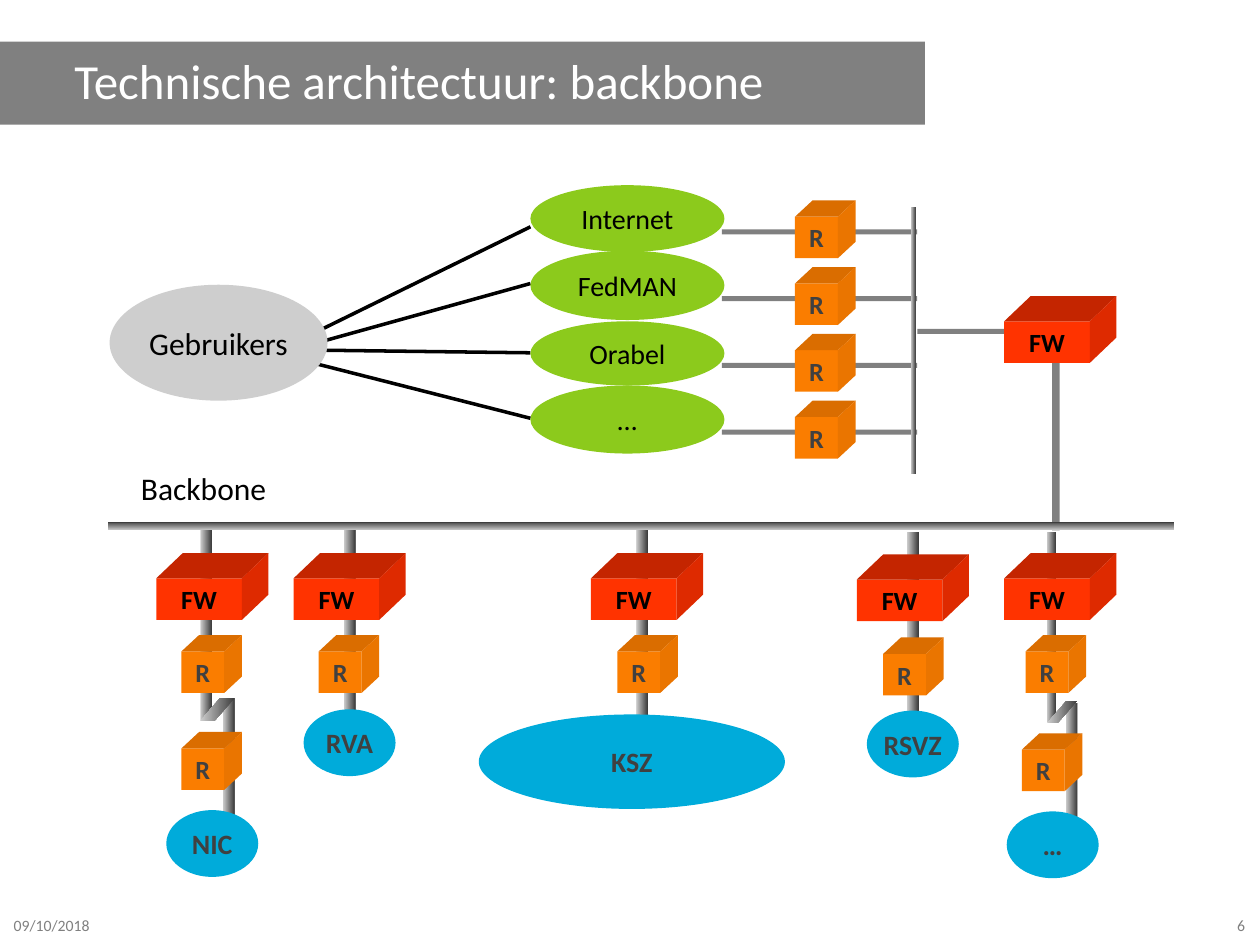
from lxml import etree
from pptx import Presentation
from pptx.dml.color import RGBColor
from pptx.enum.shapes import MSO_CONNECTOR, MSO_SHAPE
from pptx.enum.text import MSO_ANCHOR, PP_ALIGN
from pptx.oxml.ns import qn
from pptx.util import Inches, Pt

BLACK = RGBColor(0x00, 0x00, 0x00)
WHITE = RGBColor(0xFF, 0xFF, 0xFF)
GRAY = RGBColor(0x80, 0x80, 0x80)
DARK_GRAY = RGBColor(0x40, 0x40, 0x40)
PIPE_LIGHT = RGBColor(0xCE, 0xCE, 0xCE)
PIPE_DARK = RGBColor(0x3D, 0x3D, 0x3D)
GREEN = RGBColor(0x8C, 0xCA, 0x1C)
BLUE = RGBColor(0x00, 0xAB, 0xDA)
RED = RGBColor(0xFF, 0x33, 0x00)
RED_TOP = RGBColor(0xC4, 0x25, 0x00)
RED_SIDE = RGBColor(0xDE, 0x2A, 0x00)
ORANGE = RGBColor(0xFA, 0x7D, 0x00)
ORANGE_TOP = RGBColor(0xDA, 0x6D, 0x00)
ORANGE_SIDE = RGBColor(0xEA, 0x75, 0x00)

FIREWALL = ("FW", 0.68, 0.21, 0.2, BLACK, RED, RED_TOP, RED_SIDE)
ROUTER = ("R", 0.34, 0.14, 0.13, DARK_GRAY, ORANGE, ORANGE_TOP, ORANGE_SIDE)
CUBE_HEIGHT = 0.33

presentation = Presentation()
presentation.slide_width = Inches(10)
presentation.slide_height = Inches(7.5)
slide = presentation.slides.add_slide(presentation.slide_layouts[5])
shapes = slide.shapes


def add_block(kind, left, top, width, height, fill, text="", size=16, color=BLACK, bold=False):
    shape = shapes.add_shape(kind, Inches(left), Inches(top), Inches(width), Inches(height))
    shape.shadow.inherit = False
    shape.fill.solid()
    shape.fill.fore_color.rgb = fill
    shape.line.fill.background()
    if text:
        frame = shape.text_frame
        frame.word_wrap = False
        frame.vertical_anchor = MSO_ANCHOR.MIDDLE
        frame.paragraphs[0].alignment = PP_ALIGN.CENTER
        run = frame.paragraphs[0].add_run()
        run.text = text
        run.font.name = "Calibri"
        run.font.size = Pt(size)
        run.font.bold = bold
        run.font.color.rgb = color
    return shape


def add_cube(cube, left, top):
    text, width, depth, rise, color, front, top_fill, side_fill = cube
    right, bottom = left + width, top + CUBE_HEIGHT
    add_block(MSO_SHAPE.RECTANGLE, left, top, width, CUBE_HEIGHT, front, text, 15, color, True)
    top_face = [(left, top), (left + depth, top - rise), (right + depth, top - rise), (right, top)]
    side_face = [(right, top), (right + depth, top - rise), (right + depth, bottom - rise), (right, bottom)]
    for corners, fill in ((top_face, top_fill), (side_face, side_fill)):
        points = [(Inches(x), Inches(y)) for x, y in corners]
        builder = shapes.build_freeform(*points[0])
        builder.add_line_segments(points[1:], close=True)
        face = builder.convert_to_shape()
        face.shadow.inherit = False
        face.fill.solid()
        face.fill.fore_color.rgb = fill
        face.line.fill.background()


title = shapes.title
title.left, title.top = Inches(-0.83), Inches(0.33)
title.width, title.height = Inches(8.17), Inches(0.66)
title.fill.solid()
title.fill.fore_color.rgb = GRAY
title_frame = title.text_frame
title_frame.margin_left = Inches(1.42)
title_frame.margin_top = title_frame.margin_bottom = Inches(0.15)
title_frame.vertical_anchor = MSO_ANCHOR.MIDDLE
title_paragraph = title_frame.paragraphs[0]
title_paragraph.alignment = PP_ALIGN.LEFT
title_paragraph.line_spacing = 0.9
title_run = title_paragraph.add_run()
title_run.text = "Technische architectuur: backbone"
title_run.font.name = "Calibri"
title_run.font.size = Pt(28)
title_run.font.color.rgb = WHITE

for start_x, start_y, end_y in ((2.52, 2.63, 1.8), (2.52, 2.72, 2.25), (2.59, 2.78, 2.8), (2.52, 2.89, 3.32)):
    line = shapes.add_connector(
        MSO_CONNECTOR.STRAIGHT, Inches(start_x), Inches(start_y), Inches(4.21), Inches(end_y)
    )
    line.line.color.rgb = BLACK
    line.line.width = Pt(2)
    etree.SubElement(line._element.spPr, qn("a:effectLst"))
add_block(MSO_SHAPE.OVAL, 0.87, 2.26, 1.73, 0.92, PIPE_LIGHT, "Gebruikers", 18)

add_block(MSO_SHAPE.RECTANGLE, 7.28, 2.61, 1.55, 0.04, GRAY)
add_block(MSO_SHAPE.RECTANGLE, 8.35, 2.88, 0.06, 1.33, GRAY)
networks = (("Internet", 1.47, 0.53), ("FedMAN", 1.99, 0.55), ("Orabel", 2.55, 0.51), ("…", 3.06, 0.54))
for row, (name, top, height) in enumerate(networks):
    link_top = 1.82 + 0.53 * row
    add_block(MSO_SHAPE.RECTANGLE, 5.73, link_top, 1.55, 0.04, GRAY)
    add_cube(ROUTER, 6.31, link_top - 0.1)
    add_block(MSO_SHAPE.OVAL, 4.21, top, 1.54, height, GREEN, name)

pipes = (
    (7.23, 1.64, 0.04, 2.12),
    (1.59, 4.21, 0.09, 1.51),
    (1.77, 5.54, 0.09, 1.24),
    (2.73, 4.21, 0.09, 1.51),
    (5.05, 4.21, 0.09, 1.86),
    (7.2, 4.22, 0.09, 1.51),
    (8.31, 4.22, 0.07, 1.51),
    (8.46, 5.58, 0.09, 1.24),
)
gradient_shapes = [(add_block(MSO_SHAPE.RECTANGLE, *pipe, PIPE_LIGHT), 0) for pipe in pipes]
for left, top, width in ((1.59, 5.54, 0.27), (8.31, 5.56, 0.24)):
    bend = add_block(MSO_SHAPE.PARALLELOGRAM, left, top, width, 0.18, PIPE_LIGHT)
    bend.adjustments[0] = 0.875
    gradient_shapes.append((bend, 0))
backbone = add_block(MSO_SHAPE.RECTANGLE, 0.86, 4.14, 8.46, 0.07, PIPE_LIGHT)
gradient_shapes.append((backbone, 90))
for shape, angle in gradient_shapes:
    shape.fill.gradient()
    shape.fill.gradient_angle = angle
    first, last = shape.fill.gradient_stops
    first.color.rgb, last.color.rgb = PIPE_LIGHT, PIPE_DARK

for left, top in ((7.97, 2.55), (1.24, 4.59), (2.33, 4.59), (4.69, 4.59), (6.8, 4.6), (7.97, 4.59)):
    add_cube(FIREWALL, left, top)
for left, top in (
    (1.44, 5.17), (2.53, 5.17), (4.9, 5.17), (7.01, 5.19), (8.14, 5.17), (1.44, 5.94), (8.11, 5.95)
):
    add_cube(ROUTER, left, top)

for name, left, top, width, height in (
    ("NIC", 1.32, 6.43, 0.73, 0.53),
    ("RVA", 2.41, 5.63, 0.73, 0.53),
    ("KSZ", 3.8, 5.67, 2.43, 0.75),
    ("RSVZ", 6.88, 5.64, 0.73, 0.53),
    ("…", 7.99, 6.44, 0.73, 0.53),
):
    add_block(MSO_SHAPE.OVAL, left, top, width, height, BLUE, name, 16, DARK_GRAY, True)

for text, left, top, width, height, size, color, alignment, anchor in (
    ("Backbone", 1.02, 3.67, 1.99, 0.4, 18, BLACK, PP_ALIGN.LEFT, MSO_ANCHOR.TOP),
    ("09/10/2018", 0.01, 7.12, 3.9, 0.44, 9, GRAY, PP_ALIGN.LEFT, MSO_ANCHOR.MIDDLE),
    ("6", 7.54, 7.12, 2.44, 0.44, 9, GRAY, PP_ALIGN.RIGHT, MSO_ANCHOR.MIDDLE),
):
    box = shapes.add_textbox(Inches(left), Inches(top), Inches(width), Inches(height))
    box.text_frame.word_wrap = True
    box.text_frame.vertical_anchor = anchor
    paragraph = box.text_frame.paragraphs[0]
    paragraph.alignment = alignment
    run = paragraph.add_run()
    run.text = text
    run.font.name = "Calibri"
    run.font.size = Pt(size)
    run.font.color.rgb = color

presentation.save("out.pptx")
